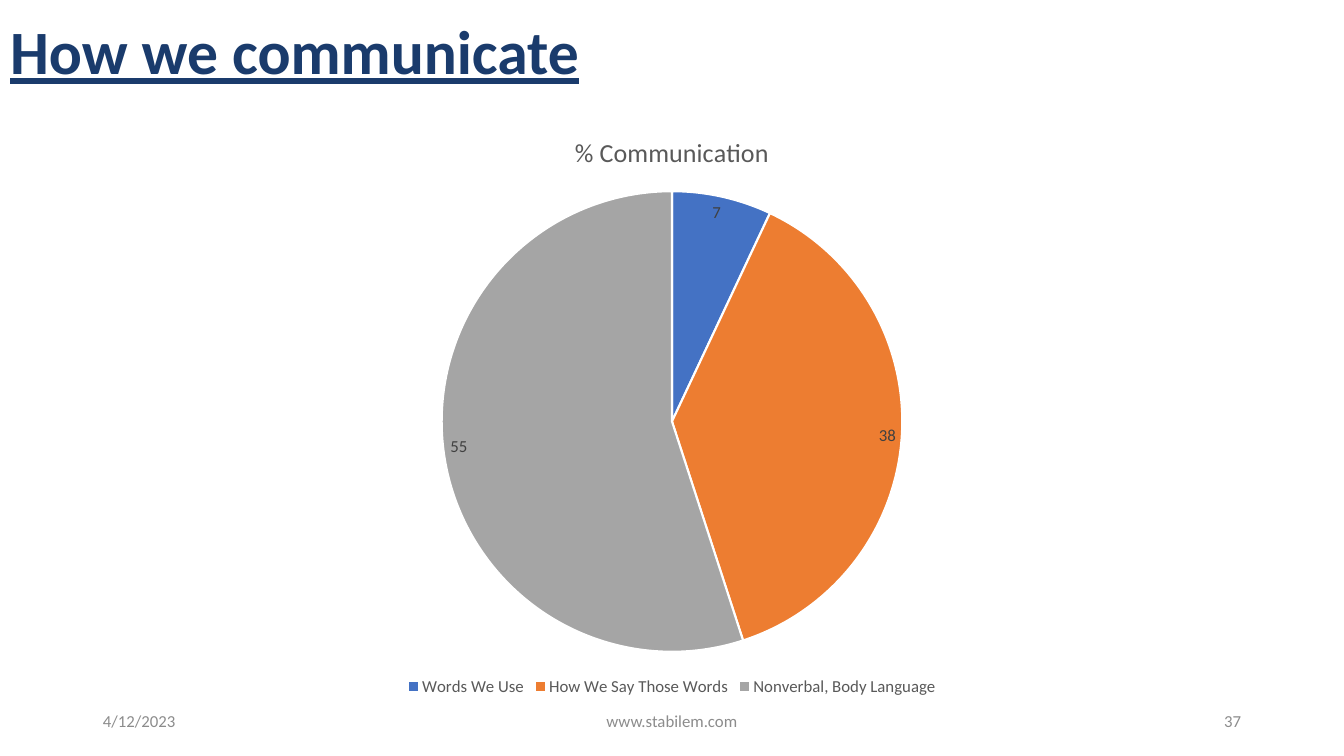
"""Build the slide on how we communicate, with a pie chart and a footer."""
from pptx import Presentation
from pptx.chart.data import CategoryChartData
from pptx.dml.color import RGBColor
from pptx.enum.chart import XL_CHART_TYPE, XL_LABEL_POSITION, XL_LEGEND_POSITION
from pptx.enum.text import MSO_ANCHOR, PP_ALIGN
from pptx.util import Emu, Pt

PIE = XL_CHART_TYPE.PIE
INSIDE_END = XL_LABEL_POSITION.INSIDE_END
BOTTOM = XL_LEGEND_POSITION.BOTTOM
MIDDLE = MSO_ANCHOR.MIDDLE
LEFT, CENTER, RIGHT = PP_ALIGN.LEFT, PP_ALIGN.CENTER, PP_ALIGN.RIGHT

EMU_PER_PX = 914400 / 100.8
FONT = "Calibri"
COLORS = {
    "title": "1A3B6C",
    "footer": "8C8C8C",
    "chart_text": "595959",
    "label": "404040",
    "edge": "FFFFFF",
}
SHARES = [
    ("Words We Use", 7, "4472C4"),
    ("How We Say Those Words", 38, "ED7D31"),
    ("Nonverbal, Body Language", 55, "A5A5A5"),
]
FOOTER = [
    ("4/12/2023", 93, 302, LEFT),
    ("www.stabilem.com", 445, 454, CENTER),
    ("37", 949, 302, RIGHT),
]


def px(n):
    """Turn pixels into EMU."""
    return Emu(round(n * EMU_PER_PX))


def rgb(name):
    """Look up a named colour."""
    return RGBColor.from_string(COLORS[name])


def format_font(font, size, color, **values):
    """Set the typeface, size, colour and further attributes of a font."""
    values = {"name": FONT, "size": Pt(size), "bold": False, **values}
    for key, value in values.items():
        setattr(font, key, value)
    font.color.rgb = rgb(color)


def write(s, text, align, size, color, **values):
    """Put one formatted, vertically centred line into a shape."""
    tf = s.text_frame
    tf.word_wrap = True
    tf.vertical_anchor = MIDDLE
    p = tf.paragraphs[0]
    p.alignment = align
    r = p.add_run()
    r.text = text
    format_font(r.font, size, color, **values)
    return p


def add_title(slide, text):
    """Place and fill the title placeholder."""
    s = slide.shapes.title
    s.left, s.top, s.width, s.height = px(0), px(0), px(1106), px(110)
    p = write(s, text, LEFT, 44, "title", bold=True, underline=True)
    p.line_spacing = 0.9


def add_pie(slide, title, shares):
    """Add the pie chart with its title, legend and value labels."""
    data = CategoryChartData()
    data.categories = [name for name, _, _ in shares]
    data.add_series("Series 1", [value for _, value, _ in shares])
    frame = slide.shapes.add_chart(PIE, px(0), px(112), px(1344), px(589), data)
    chart = frame.chart
    format_font(chart.font, 12, "chart_text")

    chart.has_title = True
    p = chart.chart_title.text_frame.paragraphs[0]
    r = p.add_run()
    r.text = title
    format_font(r.font, 18.6, "chart_text")

    chart.has_legend = True
    chart.legend.position = BOTTOM
    chart.legend.include_in_layout = False
    format_font(chart.legend.font, 12, "chart_text")

    plot = chart.plots[0]
    plot.vary_by_categories = True
    plot.has_data_labels = True
    labels = plot.data_labels
    labels.show_value = True
    labels.show_percentage = False
    labels.position = INSIDE_END
    format_font(labels.font, 12, "label")

    for i, (_, _, color) in enumerate(shares):
        style = plot.series[0].points[i].format
        style.fill.solid()
        style.fill.fore_color.rgb = RGBColor.from_string(color)
        style.line.color.rgb = rgb("edge")
        style.line.width = Pt(1.5)


def add_footer(slide, text, left, width, align):
    """Add one text box of the footer row."""
    s = slide.shapes.add_textbox(px(left), px(701), px(width), px(40))
    write(s, text, align, 12, "footer")


def main():
    """Build and save the slide."""
    prs = Presentation()
    prs.slide_width, prs.slide_height = px(1344), px(756)
    slide = prs.slides.add_slide(prs.slide_layouts[5])
    add_title(slide, "How we communicate")
    add_pie(slide, "% Communication", SHARES)
    for item in FOOTER:
        add_footer(slide, *item)
    prs.save("out.pptx")


if __name__ == "__main__":
    main()
